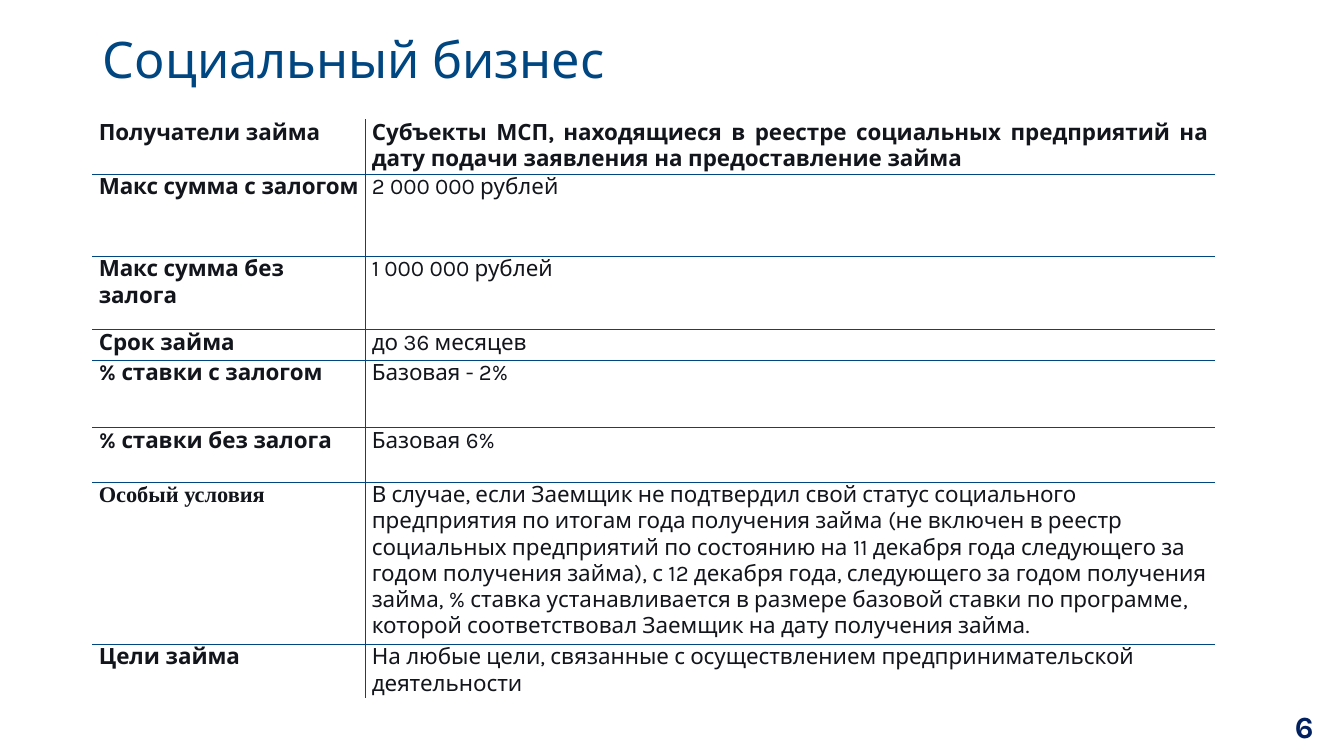
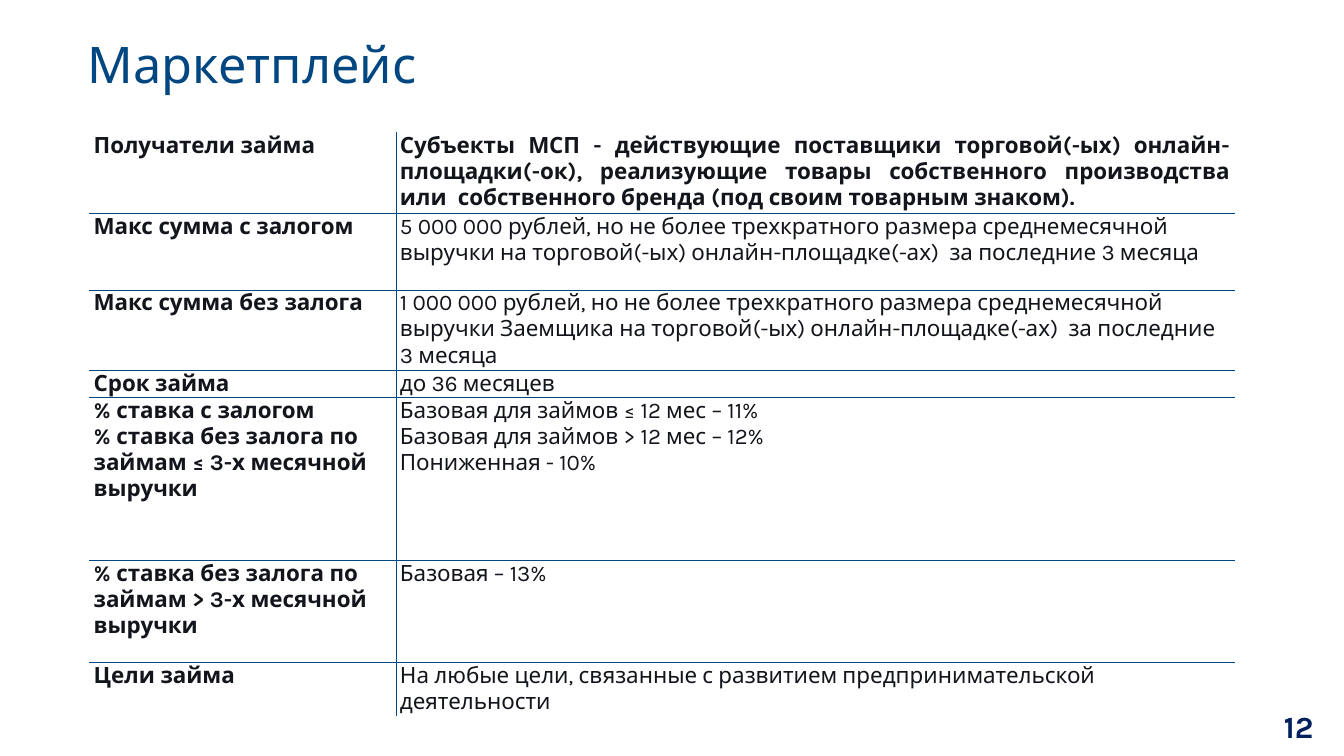
import pptx
import pptx.dml.color
import pptx.enum.text
import pptx.oxml
import pptx.oxml.ns
import pptx.util
from pptx.util import Cm

COLORS = {"title": "004680", "grid": "004680", "text": "13151C",
          "number": "002060", "paper": "FFFFFF"}
FONT = "Karla"
ALIGN = pptx.enum.text.PP_ALIGN
MIDDLE = pptx.enum.text.MSO_ANCHOR.MIDDLE

# Content: each row is (height in cm, label, value); a line break starts a paragraph
SLIDES = [
    {
        "title": "Социальный бизнес", "number": "6",
        "title_at": (2.34, 0.41, 30.33, 2.29),
        "table_at": (2.34, 3.02), "columns": (6.88, 21.39), "inset": 0.15,
        "rows": [
            (1.37, "Получатели займа",
             "Субъекты МСП, находящиеся в реестре социальных предприятий на дату "
             "подачи заявления на предоставление займа"),
            (2.07, "Макс сумма с залогом", "2 000 000 рублей"),
            (1.85, "Макс сумма без залога", "1 000 000 рублей"),
            (0.77, "Срок займа", "до 36 месяцев"),
            (1.7, "% ставки с залогом", "Базовая - 2%"),
            (1.37, "% ставки без залога", "Базовая 6%"),
            (4.09, "Особый условия",
             "В случае, если Заемщик не подтвердил свой статус социального "
             "предприятия по итогам года получения займа (не включен в реестр "
             "социальных предприятий по состоянию на 11 декабря года следующего за "
             "годом получения займа), с 12 декабря года, следующего за годом "
             "получения займа, % ставка устанавливается в размере базовой ставки "
             "по программе, которой соответствовал Заемщик на дату получения займа."),
            (1.27, "Цели займа",
             "На любые цели, связанные с осуществлением предпринимательской "
             "деятельности"),
        ],
        "label_fonts": {"Особый условия": "Times New Roman"},
    },
    {
        "title": "Маркетплейс", "number": "12",
        "title_at": (1.96, 0.56, 29.72, 2.29),
        "table_at": (2.26, 3.35), "columns": (7.72, 21.13), "inset": 0.1,
        "rows": [
            (1.93, "Получатели займа",
             "Субъекты МСП - действующие поставщики торговой(-ых) "
             "онлайн-площадки(-ок), реализующие товары собственного производства "
             "или  собственного бренда (под своим товарным знаком)."),
            (1.93, "Макс сумма с залогом",
             "5 000 000 рублей, но не более трехкратного размера среднемесячной "
             "выручки на торговой(-ых) онлайн-площадке(-ах)  за последние 3 месяца"),
            (1.93, "Макс сумма без залога",
             "1 000 000 рублей, но не более трехкратного размера среднемесячной "
             "выручки Заемщика на торговой(-ых) онлайн-площадке(-ах)  за последние "
             "3 месяца"),
            (0.64, "Срок займа", "до 36 месяцев"),
            (4.11, "% ставка с залогом\n"
             "% ставка без залога по займам ≤ 3-х месячной выручки",
             "Базовая для займов ≤ 12 мес – 11%\n"
             "Базовая для займов > 12 мес – 12%\n"
             "Пониженная - 10%"),
            (2.57, "% ставка без залога по займам > 3-х месячной выручки",
             "Базовая – 13%"),
            (0.64, "Цели займа",
             "На любые цели, связанные с развитием предпринимательской деятельности"),
        ],
        "label_fonts": {},
    },
]


def rgb(name):
    return pptx.dml.color.RGBColor.from_string(COLORS[name])


def style(p, size, color, bold=False, font=FONT, align=ALIGN.LEFT):
    p.alignment = align
    p.font.name, p.font.size, p.font.bold = font, pptx.util.Pt(size), bold
    p.font.color.rgb = rgb(color)


def set_borders(cell, outer):
    """Draw inner edges as grid lines and outer edges in the paper colour."""
    tcPr = cell._tc.get_or_add_tcPr()
    for side in "LRTB":
        color, width = ("paper", 12700) if side in outer else ("grid", 9525)
        tcPr.append(pptx.oxml.parse_xml(
            f'<a:ln{side} {pptx.oxml.ns.nsdecls("a")} w="{width}"><a:solidFill>'
            f'<a:srgbClr val="{COLORS[color]}"/></a:solidFill></a:ln{side}>'))


def add_title(s, text, box):
    sp = s.shapes.title
    sp.left, sp.top, sp.width, sp.height = map(Cm, box)
    tf = sp.text_frame
    tf.text, tf.vertical_anchor = text, MIDDLE
    p = tf.paragraphs[0]
    p.line_spacing = 0.9
    style(p, 36, "title")


def add_number(s, text):
    tf = s.shapes.add_textbox(Cm(25.58), Cm(17.91), Cm(7.77), Cm(0.79)).text_frame
    tf.word_wrap, tf.vertical_anchor = True, MIDDLE
    tf.text = text
    style(tf.paragraphs[0], 22, "number", bold=True, align=ALIGN.RIGHT)


def add_terms(s, spec_):
    rows, columns = spec_["rows"], spec_["columns"]
    heights = [row[0] for row in rows]
    table = s.shapes.add_table(len(rows), len(columns), *map(Cm, spec_["table_at"]),
                               Cm(sum(columns)), Cm(sum(heights))).table
    table.first_row = table.horz_banding = False
    for column, width in zip(table.columns, columns):
        column.width = Cm(width)
    for i, (height, *texts) in enumerate(rows):
        table.rows[i].height = Cm(height)
        for j, text in enumerate(texts):
            cell = table.cell(i, j)
            cell.margin_left = cell.margin_right = Cm(spec_["inset"])
            cell.margin_top = cell.margin_bottom = 0
            outer = "LR"[j] + ("T" if i == 0 else "") + ("B" if i == len(rows) - 1 else "")
            set_borders(cell, outer)
            cell.fill.solid()
            cell.fill.fore_color.rgb = rgb("paper")
            cell.text_frame.text = text
            # Labels and the first row are bold; the first value is justified
            align = ALIGN.JUSTIFY if (i, j) == (0, 1) else ALIGN.LEFT
            font = spec_["label_fonts"].get(text, FONT)
            for p in cell.text_frame.paragraphs:
                style(p, 16, "text", i == 0 or j == 0, font, align)


def main():
    prs = pptx.Presentation()
    prs.slide_width, prs.slide_height = Cm(33.87), Cm(19.05)
    for content in SLIDES:
        s = prs.slides.add_slide(prs.slide_layouts[5])
        add_number(s, content["number"])
        add_title(s, content["title"], content["title_at"])
        add_terms(s, content)
    prs.save("out.pptx")


if __name__ == "__main__":
    main()
